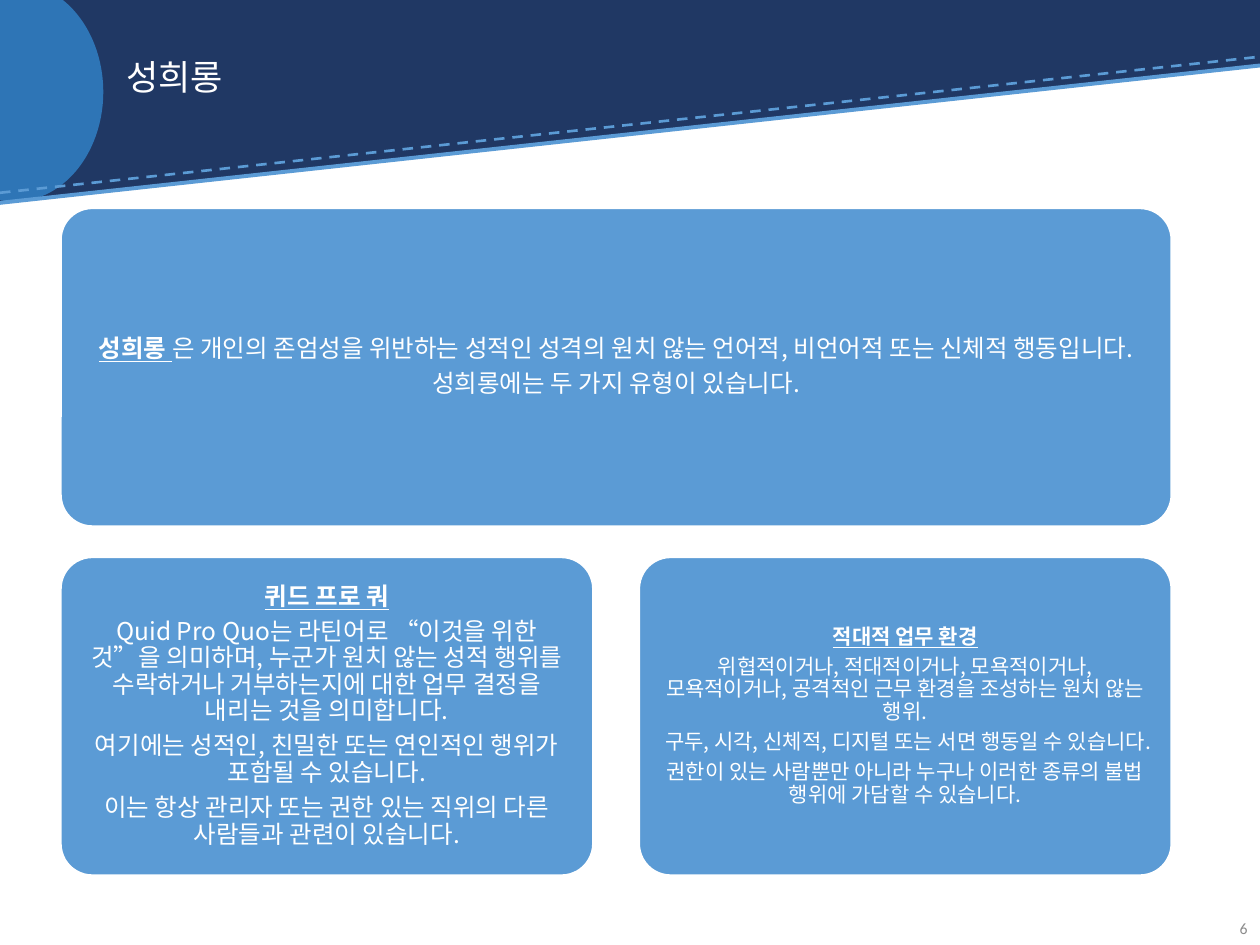
from lxml import etree
from pptx import Presentation
from pptx import util as u
from pptx.dml.color import RGBColor
from pptx.enum import dml, shapes, text
from pptx.oxml.ns import qn

FONT = "Noto Sans CJK KR"
COLORS = {"navy": "203864", "blue": "2E75B6", "sky": "5B9BD5",
          "white": "FFFFFF", "grey": "8C8C8C"}
C = {name: RGBColor.from_string(value) for name, value in COLORS.items()}

prs = Presentation()
prs.slide_width, prs.slide_height = u.Inches(10), u.Inches(7.5)
s = prs.slides.add_slide(prs.slide_layouts[5])


def add_box(kind, x, y, w, h, fill):
    sp = s.shapes.add_shape(kind, *map(u.Inches, (x, y, w, h)))
    sp.shadow.inherit = False
    sp.fill.solid()
    sp.fill.fore_color.rgb = C[fill]
    sp.line.fill.background()
    return sp


def style(p, size, color, name, align):
    p.alignment = align
    p.font.size = u.Pt(size)
    p.font.color.rgb = C[color]
    p.font.name = name
    props = p._p.pPr.find(qn("a:defRPr"))
    etree.SubElement(props, qn("a:ea")).set("typeface", name)


add_box(shapes.MSO_SHAPE.RECTANGLE, 0, 0, 10, 0.52, "navy")
slope = add_box(shapes.MSO_SHAPE.RIGHT_TRIANGLE, 0, 0.51, 10, 1.09, "navy")
slope._element.spPr.find(qn("a:xfrm")).set("flipV", "1")
add_box(shapes.MSO_SHAPE.OVAL, -0.59, -0.14, 1.41, 1.74, "blue")

for y1, y2, width, dash in [(1.53, 0.45, 1.5, dml.MSO_LINE.DASH),
                            (1.61, 0.52, 2.25, None)]:
    line = s.shapes.add_connector(shapes.MSO_CONNECTOR.STRAIGHT, 0, u.Inches(y1),
                                  prs.slide_width, u.Inches(y2))
    line.line.color.rgb = C["sky"]
    line.line.width = u.Pt(width)
    line.line.dash_style = dash
    etree.SubElement(line._element.spPr, qn("a:effectLst"))

title = s.shapes.title
s.shapes._spTree.append(title._element)
title.left, title.top, title.width, title.height = map(u.Inches, (0.9, 0.2, 8.05, 0.86))
tf = title.text_frame
tf.text = "성희롱"
tf.vertical_anchor = text.MSO_ANCHOR.MIDDLE
tf.auto_size = text.MSO_AUTO_SIZE.NONE
tf.paragraphs[0].line_spacing = 0.9
style(tf.paragraphs[0], 20, "white", FONT, text.PP_ALIGN.LEFT)

number = s.shapes.add_textbox(*map(u.Inches, (9.47, 7.17, 0.53, 0.4)))
tf = number.text_frame
tf.word_wrap = True
tf.vertical_anchor = text.MSO_ANCHOR.MIDDLE
tf.text = "6"
tf.paragraphs[0].space_after = u.Pt(6)
style(tf.paragraphs[0], 9, "grey", "Calibri", text.PP_ALIGN.RIGHT)

LEFT, TOP, COL, ROW, COL_GAP, ROW_GAP = 0.48, 1.65, 4.23, 2.53, 0.36, 0.24
cards = [
    (0, 0, 2, 14, 0.13, [
        ("성희롱 ", "은 개인의 존엄성을 위반하는 성적인 성격의 원치 않는 언어적, 비언어적 또는 신체적 행동입니다."),
        ("", "성희롱에는 두 가지 유형이 있습니다."),
    ]),
    (0, 1, 1, 14, 0.13, [
        ("퀴드 프로 쿼", ""),
        ("", "Quid Pro Quo는 라틴어로 “이것을 위한 것”을 의미하며, 누군가 원치 않는 성적 행위를 "
             "수락하거나 거부하는지에 대한 업무 결정을 내리는 것을 의미합니다."),
        ("", "여기에는 성적인, 친밀한 또는 연인적인 행위가 포함될 수 있습니다."),
        ("", "이는 항상 관리자 또는 권한 있는 직위의 다른 사람들과 관련이 있습니다."),
    ]),
    (1, 1, 1, 12, 0.12, [
        ("적대적 업무 환경", ""),
        ("", "위협적이거나, 적대적이거나, 모욕적이거나, 모욕적이거나, 공격적인 근무 환경을 조성하는 원치 않는 행위."),
        ("", "구두, 시각, 신체적, 디지털 또는 서면 행동일 수 있습니다."),
        ("", "권한이 있는 사람뿐만 아니라 누구나 이러한 종류의 불법 행위에 가담할 수 있습니다."),
    ]),
]
for col, row, span, size, inset, paragraphs in cards:
    card = add_box(shapes.MSO_SHAPE.ROUNDED_RECTANGLE,
                   LEFT + col * (COL + COL_GAP), TOP + row * (ROW + ROW_GAP),
                   span * COL + (span - 1) * COL_GAP, ROW, "sky")
    card.adjustments[0] = 0.1
    card.line.color.rgb = C["white"]
    card.line.width = u.Pt(1.5)
    tf = card.text_frame
    tf.word_wrap = True
    tf.vertical_anchor = text.MSO_ANCHOR.MIDDLE
    tf.margin_left = tf.margin_right = tf.margin_top = tf.margin_bottom = u.Inches(inset)
    for i, (term, body) in enumerate(paragraphs):
        p = tf.add_paragraph() if i else tf.paragraphs[0]
        p.line_spacing = 0.9
        p.space_after = u.Pt(0.35 * size)
        style(p, size, "white", FONT, text.PP_ALIGN.CENTER)
        if term:
            r = p.add_run()
            r.text = term
            r.font.bold = r.font.underline = True
        if body:
            p.add_run().text = body

prs.save("out.pptx")
